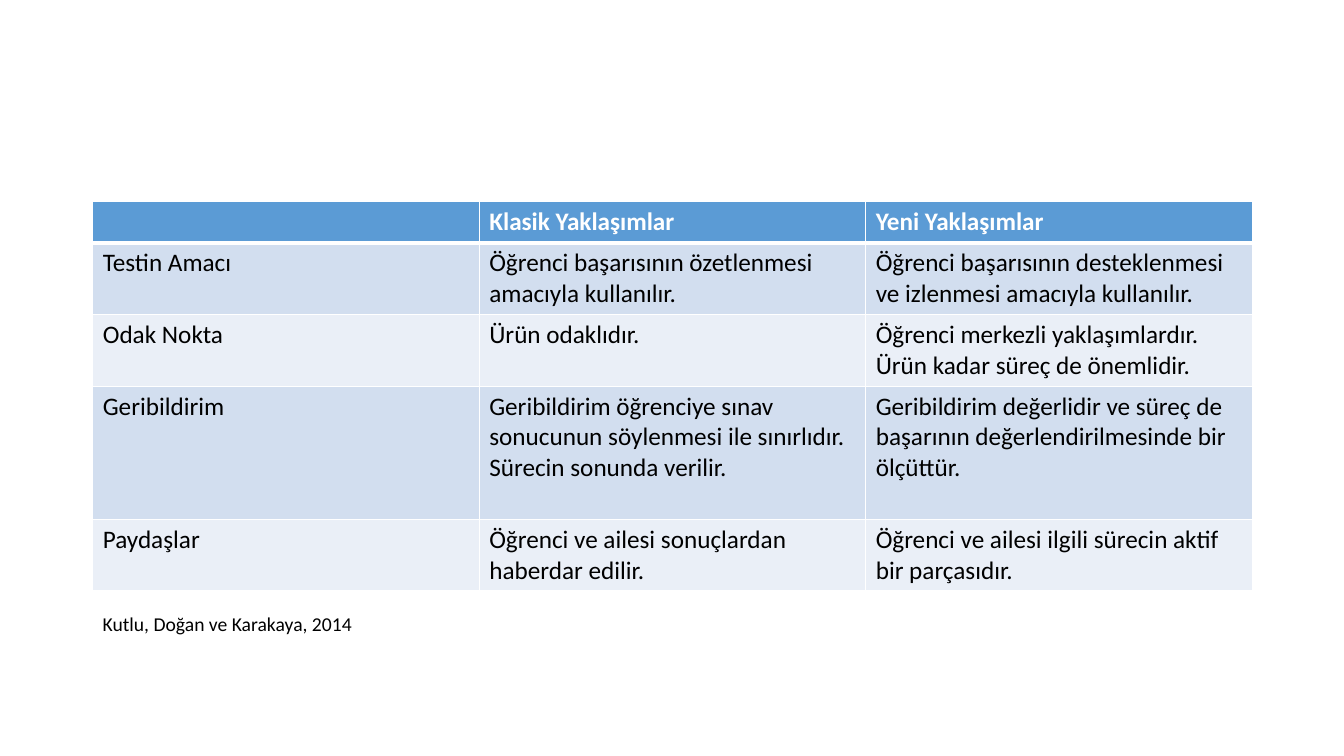
import dataclasses

import lxml.etree
import pptx
import pptx.dml.color
import pptx.oxml.ns
import pptx.util

Inches = pptx.util.Inches

COLORS = {
    "header": "5B9BD5",
    "odd": "D2DEEF",
    "even": "EAEFF7",
    "white": "FFFFFF",
    "black": "000000",
}


@dataclasses.dataclass(frozen=True)
class ComparisonRow:
    height: float
    topic: str
    classic: str
    modern: str


ROWS = [
    ComparisonRow(0.41, "", "Klasik Yaklaşımlar", "Yeni Yaklaşımlar"),
    ComparisonRow(
        0.71,
        "Testin Amacı",
        "Öğrenci başarısının özetlenmesi amacıyla kullanılır.",
        "Öğrenci başarısının desteklenmesi ve izlenmesi amacıyla kullanılır.",
    ),
    ComparisonRow(
        0.71,
        "Odak Nokta",
        "Ürün odaklıdır.",
        "Öğrenci merkezli yaklaşımlardır. Ürün kadar süreç de önemlidir.",
    ),
    ComparisonRow(
        1.32,
        "Geribildirim",
        "Geribildirim öğrenciye sınav sonucunun söylenmesi ile sınırlıdır. "
        "Sürecin sonunda verilir.",
        "Geribildirim değerlidir ve süreç de başarının değerlendirilmesinde "
        "bir ölçüttür.",
    ),
    ComparisonRow(
        0.71,
        "Paydaşlar",
        "Öğrenci ve ailesi sonuçlardan haberdar edilir.",
        "Öğrenci ve ailesi ilgili sürecin aktif bir parçasıdır.",
    ),
]
LEFT = 0.92
TABLE_TOP = 2
TABLE_WIDTH = 11.5
COLUMN_COUNT = 3


def rgb(name: str) -> pptx.dml.color.RGBColor:
    return pptx.dml.color.RGBColor.from_string(COLORS[name])


def write_text(frame, text: str, size: float, color: str, bold: bool = False) -> None:
    para = frame.paragraphs[0]
    para.text = text
    formats = {"name": "Calibri", "size": pptx.util.Pt(size), "bold": bold}
    for span in para.runs:
        for attribute, value in formats.items():
            setattr(span.font, attribute, value)
        span.font.color.rgb = rgb(color)


def add_borders(cell, widths: dict[str, float]) -> None:
    """Draw white cell edges; widths maps an edge letter to points."""
    qualify = pptx.oxml.ns.qn
    properties = cell._tc.get_or_add_tcPr()
    for edge, width in widths.items():
        line = lxml.etree.SubElement(
            properties, qualify(f"a:ln{edge}"), w=str(pptx.util.Pt(width))
        )
        fill = lxml.etree.SubElement(line, qualify("a:solidFill"))
        lxml.etree.SubElement(fill, qualify("a:srgbClr"), val=COLORS["white"])


def add_comparison_table(page) -> None:
    table = page.shapes.add_table(
        len(ROWS),
        COLUMN_COUNT,
        Inches(LEFT),
        Inches(TABLE_TOP),
        Inches(TABLE_WIDTH),
        Inches(sum(row.height for row in ROWS)),
    ).table
    for index, row in enumerate(ROWS):
        table.rows[index].height = Inches(row.height)
        is_header = index == 0
        fill = "header" if is_header else "odd" if index % 2 else "even"
        edges = {"L": 1, "R": 1, "T": 3 if index == 1 else 1, "B": 3 if is_header else 1}
        for cell, text in zip(
            table.rows[index].cells, (row.topic, row.classic, row.modern)
        ):
            add_borders(cell, edges)
            cell.fill.solid()
            cell.fill.fore_color.rgb = rgb(fill)
            write_text(
                cell.text_frame, text, 18, "white" if is_header else "black", is_header
            )


def add_citation(page) -> None:
    box = page.shapes.add_textbox(
        Inches(LEFT), Inches(6.02), Inches(6.67), Inches(0.34)
    )
    box.text_frame.word_wrap = True
    write_text(box.text_frame, "Kutlu, Doğan ve Karakaya, 2014", 14, "black")


def main() -> None:
    deck = pptx.Presentation()
    deck.slide_width = Inches(13.33)
    deck.slide_height = Inches(7.5)
    page = deck.slides.add_slide(deck.slide_layouts[6])
    add_comparison_table(page)
    add_citation(page)
    deck.save("out.pptx")


if __name__ == "__main__":
    main()
